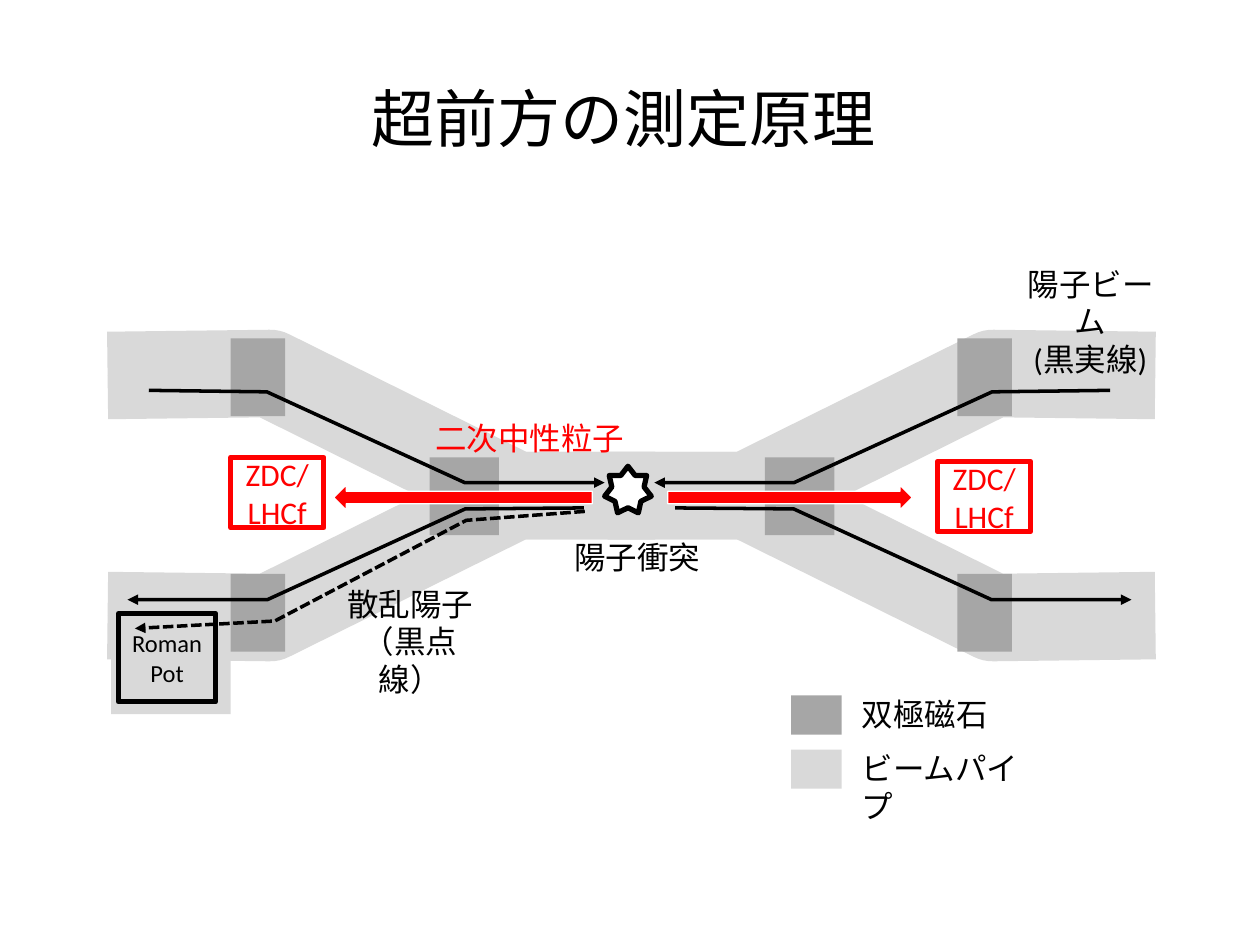
from lxml import etree
from pptx import Presentation
from pptx.dml.color import RGBColor
from pptx.enum.dml import MSO_LINE
from pptx.enum.shapes import MSO_SHAPE
from pptx.enum.text import MSO_ANCHOR, PP_ALIGN
from pptx.oxml.ns import qn
from pptx.util import Cm, Pt

RECT, STAR, ARROW = MSO_SHAPE.RECTANGLE, MSO_SHAPE.STAR_7_POINT, MSO_SHAPE.LEFT_ARROW
LEFT, CENTER = PP_ALIGN.LEFT, PP_ALIGN.CENTER
TOP, MIDDLE = MSO_ANCHOR.TOP, MSO_ANCHOR.MIDDLE
DASH = MSO_LINE.SQUARE_DOT

BLACK = RGBColor(0x00, 0x00, 0x00)
WHITE = RGBColor(0xFF, 0xFF, 0xFF)
RED = RGBColor(0xFF, 0x00, 0x00)
PIPE = RGBColor(0xD9, 0xD9, 0xD9)
MAGNET = RGBColor(0xA6, 0xA6, 0xA6)


def write(frame, text, size=18, color=BLACK, align=LEFT, anchor=TOP):
    """Fill a text frame, one paragraph per line of text."""
    frame.word_wrap = True
    frame.vertical_anchor = anchor
    for i, line in enumerate(text.split("\n")):
        para = frame.paragraphs[0] if i == 0 else frame.add_paragraph()
        para.alignment = align
        run = para.add_run()
        run.text = line
        run.font.name = "Calibri"
        run.font.size = Pt(size)
        run.font.color.rgb = color


class Board:
    """Current slide and the shared style of its elements."""

    def __init__(self, slide):
        self.shapes = slide.shapes

    def paint(self, shape, fill, line, width):
        shape.shadow.inherit = False
        for part, color in ((shape.fill, fill), (shape.line.fill, line)):
            if color is None:
                part.background()
            else:
                part.solid()
                part.fore_color.rgb = color
        if line is not None:
            shape.line.width = Pt(width)
        return shape

    def shape(self, x, y, w, h, kind=RECT, fill=None, line=None, width=3):
        item = self.shapes.add_shape(kind, Cm(x), Cm(y), Cm(w), Cm(h))
        return self.paint(item, fill, line, width)

    def box(self, x, y, w, h, text, color, size=18):
        item = self.shape(x, y, w, h, line=color)
        write(item.text_frame, text, size=size, color=color, align=CENTER, anchor=MIDDLE)

    def label(self, x, y, w, h, text, **style):
        item = self.shapes.add_textbox(Cm(x), Cm(y), Cm(w), Cm(h))
        write(item.text_frame, text, **style)

    def track(self, points, fill=None, line=BLACK, width=2, dash=None, arrow=True):
        first, *rest = [(Cm(x), Cm(y)) for x, y in points]
        pen = self.shapes.build_freeform(*first)
        pen.add_line_segments(rest, close=False)
        item = self.paint(pen.convert_to_shape(), fill, line, width)
        if dash is not None:
            item.line.dash_style = dash
        if arrow:
            ln = item.line.fill._xPr
            etree.SubElement(ln, qn("a:tailEnd"), type="triangle")


def flip(points):
    """Mirror a beam to the other side of the collision point."""
    return [(25.38 - x, y) for x, y in points]


def main():
    deck = Presentation()
    deck.slide_width, deck.slide_height = Cm(25.4), Cm(19.05)
    board = Board(deck.slides.add_slide(deck.slide_layouts[6]))

    # Title
    board.label(7.24, 1.47, 10.77, 1.8, "超前方の測定原理", size=36)

    # Beam pipes: one arm, mirrored both ways about the centre
    arm = [(10.56, 2.42), (7.29, 2.46), (2.33, 0), (-0.48, 0)]
    for sx in (1, -1):
        for sy in (-1, 1):
            board.track([(12.73 + sx * x, 9.99 + sy * y) for x, y in arm],
                        fill=PIPE, line=PIPE, width=50, arrow=False)
    board.shape(2.24, 12.14, 2.41, 2.26, fill=PIPE)

    # Dipole magnets
    for x in (4.65, 19.3):
        for y in (6.82, 11.57):
            board.shape(x, y, 1.1, 1.57, fill=MAGNET)
    for x in (8.66, 15.42):
        board.shape(x, 9.22, 1.4, 1.57, fill=MAGNET)

    # Proton beams, incoming and outgoing
    inward = [(3, 7.87), (5.38, 7.9), (9.37, 9.73), (12.19, 9.73)]
    outward = [(13.61, 10.24), (16, 10.26), (19.99, 12.09), (22.81, 12.09)]
    for beam in (inward, outward):
        board.track(beam)
        board.track(flip(beam))

    # Scattered protons
    board.track([(11.79, 10.31), (9.4, 10.49), (5.54, 12.52), (2.72, 12.67)], dash=DASH)

    # Collision and neutral particles
    board.shape(12.19, 9.4, 0.94, 0.94, kind=STAR, fill=WHITE, line=BLACK)
    for x, w, turn in ((6.73, 5.21, 0), (13.46, 4.93, 180)):
        ray = board.shape(x, 9.78, w, 0.5, kind=ARROW, fill=RED, line=WHITE, width=0.75)
        ray.rotation = turn

    # Detectors
    for x, y in ((4.65, 9.22), (18.9, 9.3)):
        board.box(x, y, 1.88, 1.42, "ZDC/LHCf", RED)
    board.box(2.39, 12.37, 1.96, 1.78, "Roman Pot", BLACK, size=14)

    # Labels
    board.label(20.19, 5.21, 3.58, 1.8, "陽子ビーム\n(黒実線)", align=CENTER)
    board.label(8.53, 8.33, 4.37, 1.02, "二次中性粒子", color=RED)
    board.label(11.33, 10.72, 3.08, 1.02, "陽子衝突")
    board.label(6.73, 11.66, 3.08, 1.8, "散乱陽子\n（黒点線）", align=CENTER)

    # Legend
    for y, fill, w, text in ((14.02, MAGNET, 3.08, "双極磁石"),
                             (15.11, PIPE, 4.19, "ビームパイプ")):
        board.shape(15.95, y, 1.02, 0.79, fill=fill)
        board.label(17.12, y - 0.13, w, 1.02, text)

    deck.save("out.pptx")


if __name__ == "__main__":
    main()
